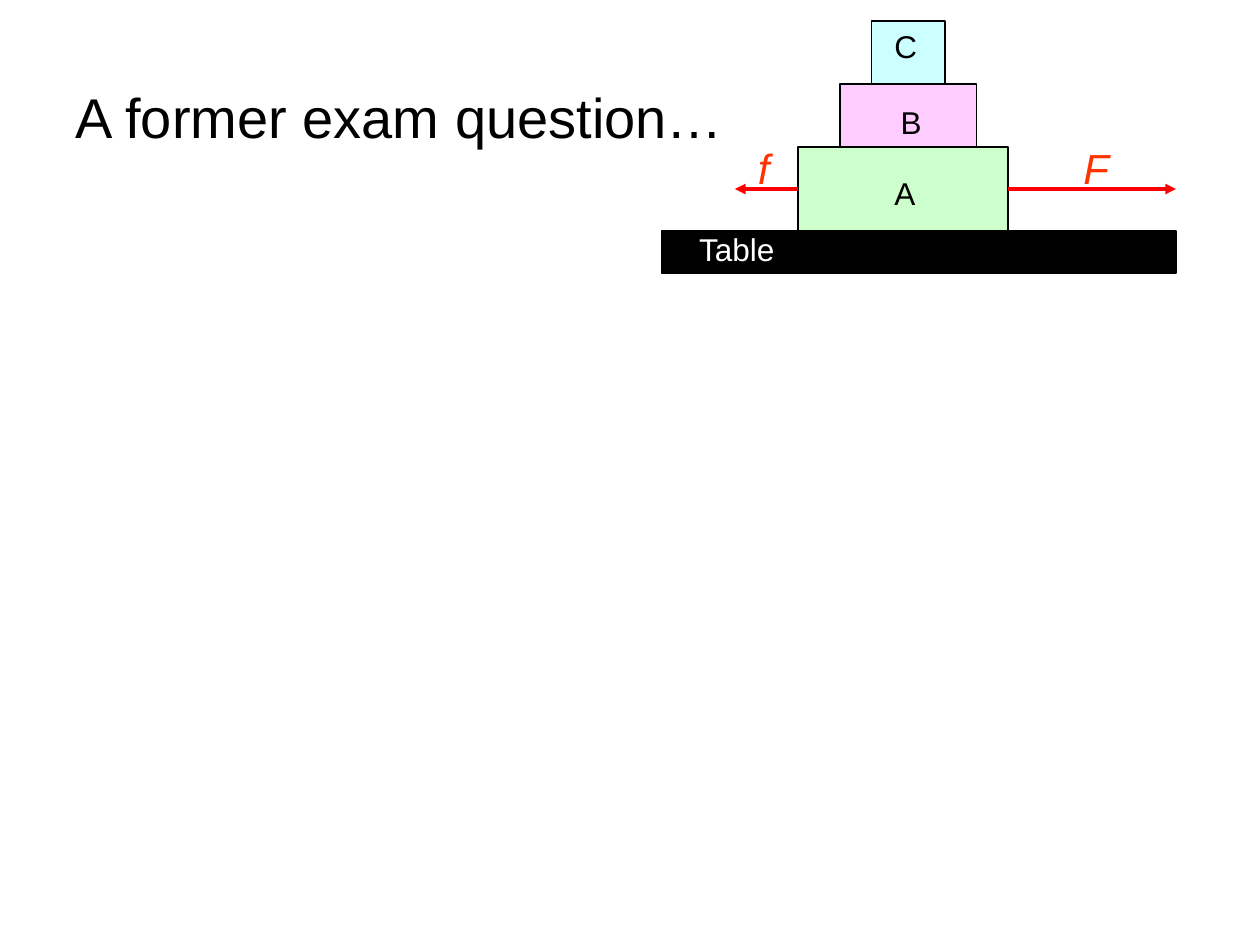
from dataclasses import dataclass

from lxml.etree import SubElement
from pptx import Presentation
from pptx.dml.color import RGBColor as RGB
from pptx.enum.shapes import MSO_CONNECTOR as CONN, MSO_SHAPE as SHAPE
from pptx.enum.text import MSO_ANCHOR as ANCHOR, MSO_AUTO_SIZE as AUTO, PP_ALIGN as ALIGN
from pptx.oxml.ns import qn
from pptx.util import Pt


@dataclass(frozen=True)
class Theme:
    """Colours, type sizes and line widths of the slide."""
    font: str = "Arial"
    black: RGB = RGB(0x00, 0x00, 0x00)
    white: RGB = RGB(0xFF, 0xFF, 0xFF)
    cyan: RGB = RGB(0xCC, 0xFF, 0xFF)
    pink: RGB = RGB(0xFF, 0xCC, 0xFF)
    green: RGB = RGB(0xCC, 0xFF, 0xCC)
    arrow: RGB = RGB(0xFF, 0x00, 0x00)
    force: RGB = RGB(0xFF, 0x33, 0x00)
    title_size: float = 32
    label_size: float = 18
    force_size: float = 24
    outline: float = 0.75
    arrow_width: float = 2


THEME = Theme()


def add_run(p, text, size, color, italic=False):
    """Append a formatted run to a paragraph."""
    r = p.add_run()
    r.text = text
    r.font.name = THEME.font
    r.font.size = Pt(size)
    r.font.italic = italic
    r.font.color.rgb = color


def add_title(s, text, x, y, w, h):
    """Place the title placeholder in its box."""
    sp = s.shapes.title
    sp.left, sp.top, sp.width, sp.height = Pt(x), Pt(y), Pt(w), Pt(h)
    tf = sp.text_frame
    tf.vertical_anchor = ANCHOR.MIDDLE
    p = tf.paragraphs[0]
    p.alignment = ALIGN.LEFT
    add_run(p, text, THEME.title_size, THEME.black)


def add_block(s, x, y, w, h, fill):
    """Draw an outlined rectangle and return it."""
    sp = s.shapes.add_shape(SHAPE.RECTANGLE, Pt(x), Pt(y), Pt(w), Pt(h))
    sp.shadow.inherit = False
    sp.fill.solid()
    sp.fill.fore_color.rgb = fill
    sp.line.color.rgb = THEME.black
    sp.line.width = Pt(THEME.outline)
    return sp


def add_label(s, text, x, y, w, h, size, color, italic=False):
    """Draw a one-line label that does not wrap."""
    tf = s.shapes.add_textbox(Pt(x), Pt(y), Pt(w), Pt(h)).text_frame
    tf.word_wrap = False
    tf.auto_size = AUTO.SHAPE_TO_FIT_TEXT
    add_run(tf.paragraphs[0], text, size, color, italic)


def add_force(s, block, side, x1, x2, y):
    """Draw an arrow from one side of a block to x2."""
    cxn = s.shapes.add_connector(CONN.STRAIGHT, Pt(x1), Pt(y), Pt(x2), Pt(y))
    cxn.begin_connect(block, side)
    cxn.line.color.rgb = THEME.arrow
    cxn.line.width = Pt(THEME.arrow_width)
    SubElement(cxn.line._get_or_add_ln(), qn("a:tailEnd"), type="triangle")
    SubElement(cxn._element.spPr, qn("a:effectLst"))


def add_stack(s, x, y, w, h):
    """Draw the blocks on the table, their labels and the two forces."""
    t = THEME
    table_h, a_h, b_h = h / 6, h / 3, h / 4
    a_x, a_w = x + 78, 120
    table_y = y + h - table_h
    a_y = table_y - a_h
    b_y = a_y - b_h
    mid_y = a_y + a_h / 2

    add_block(s, x + 120, y, 42, b_y - y, t.cyan)
    add_block(s, x + 102, b_y, 78, b_h, t.pink)
    block_a = add_block(s, a_x, a_y, a_w, a_h, t.green)
    add_block(s, x, table_y, w, table_h, t.black)

    for text, dx, top, width, color in (
        ("A", 126, a_y + 12, 26.6, t.black),
        ("B", 129.6, b_y + 7.4, 26.6, t.black),
        ("C", 126, y, 27.4, t.black),
        ("Table", 14.4, table_y - 4, 59.8, t.white),
    ):
        add_label(s, text, x + dx, top, width, 29, t.label_size, color)

    add_force(s, block_a, 3, a_x + a_w, x + w, mid_y)
    add_force(s, block_a, 1, a_x, a_x - 36, mid_y)
    for text, dx, width in (("F", 234, 28.8), ("f", 48, 20.9)):
        add_label(s, text, x + dx, mid_y - 30, width, 36, t.force_size, t.force, True)


def main():
    """Build the slide and save it."""
    prs = Presentation()
    prs.slide_width, prs.slide_height = Pt(720), Pt(540)
    s = prs.slides.add_slide(prs.slide_layouts[5])
    add_title(s, "A former exam question…", 36, 21.6, 648, 90)
    add_stack(s, 378, 12, 294, 144)
    prs.save("out.pptx")


if __name__ == "__main__":
    main()
